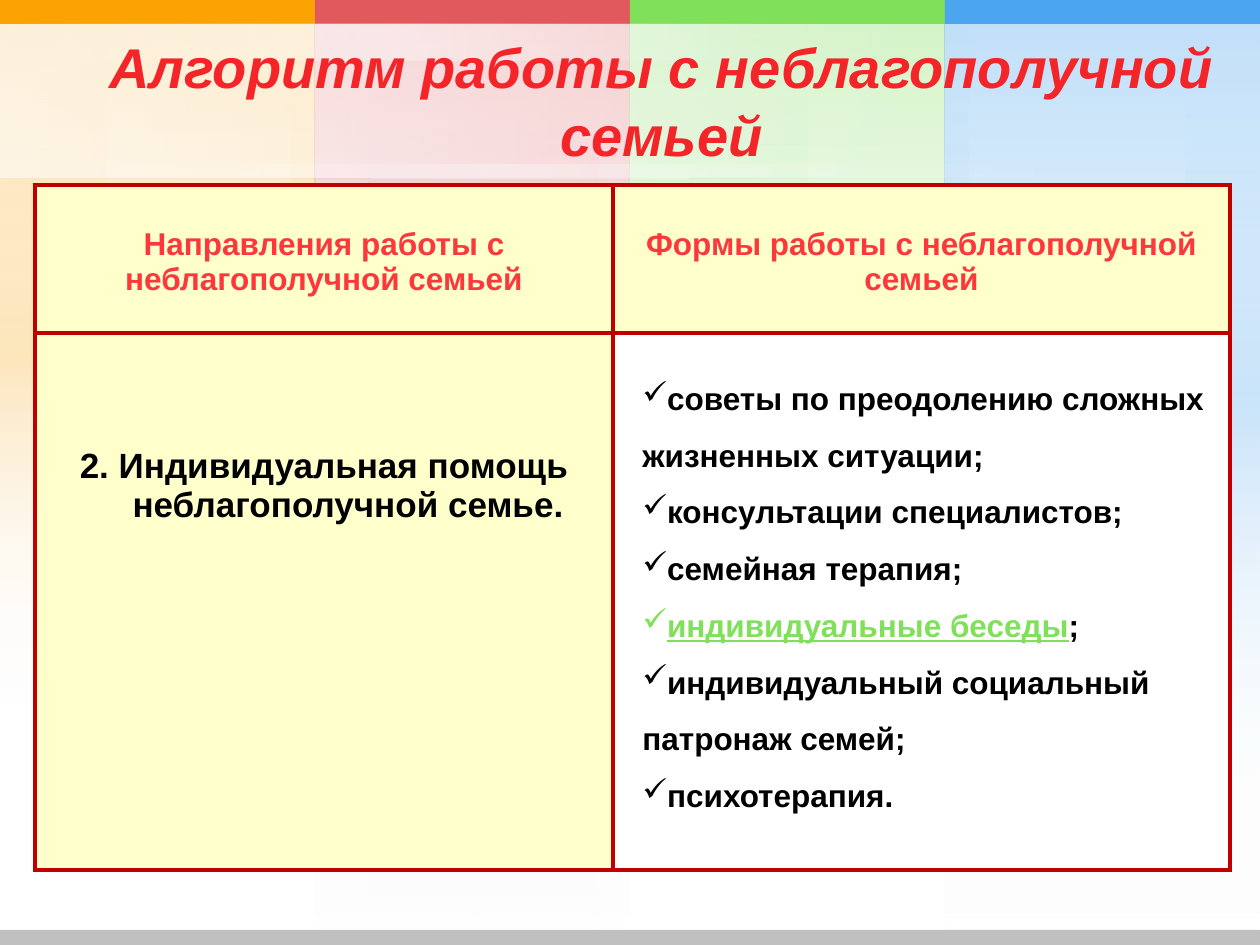
from lxml import etree
from pptx import Presentation
from pptx.dml.color import RGBColor
from pptx.enum.shapes import MSO_SHAPE
from pptx.enum.text import MSO_ANCHOR, MSO_AUTO_SIZE, PP_ALIGN
from pptx.oxml.ns import qn
from pptx.util import Emu, Pt

RECT = MSO_SHAPE.RECTANGLE
CENTER, LEFT = PP_ALIGN.CENTER, PP_ALIGN.LEFT
TOP, MIDDLE = MSO_ANCHOR.TOP, MSO_ANCHOR.MIDDLE
FIT_SHAPE, NO_FIT = MSO_AUTO_SIZE.SHAPE_TO_FIT_TEXT, MSO_AUTO_SIZE.NONE

SCALE = 914400 / 126
W, H = 1260, 945
BAND_W, STRIP_H = 315, 24
WHITE, CREAM, GREY, BORDER = "FFFFFF", "FFFFCC", "C0C0C0", "C00000"
BLACK, GREEN, RED, HEAD_RED = "000000", "80E05A", "F32528", "FD383C"

# Colour and layers (x offset, width, height) of each band, back to front
BANDS = [
    ("FCA304", [(0, 315, 708), (292, 23, 708), (0, 106, 708), (0, 315, 708)]),
    ("E1595C", [(0, 315, 945), (53, 231, 945), (0, 315, 945)]),
    (GREEN, [(0, 315, 708), (0, 178, 708), (0, 315, 708)]),
    ("4BA5EF", [(0, 24, 803), (0, 315, 941), (241, 74, 803), (0, 315, 941)]),
]
# Box and whether the glow peaks in the middle
SHINES = [
    ((524, -359, 13, 1061), True),
    ((397, -372, 154, 946), False),
    ((386, -362, 37, 808), True),
    ((397, -372, 154, 946), False),
]
FORMS = [
    [("советы по преодолению сложных жизненных ситуации;", {})],
    [("консультации специалистов;", {})],
    [("семейная терапия;", {})],
    [("индивидуальные беседы", {"color": GREEN, "underline": True}), (";", {})],
    [("индивидуальный социальный патронаж семей;", {})],
    [("психотерапия.", {})],
]


def px(v):
    return Emu(round(v * SCALE))


def rgb(color):
    return RGBColor.from_string(color)


def add_run(p, text, size=18, color=BLACK, italic=False, underline=False):
    r = p.add_run()
    r.text = text
    f = r.font
    f.name, f.size, f.bold = "Arial", Pt(size), True
    f.italic, f.underline = italic, underline
    f.color.rgb = rgb(color)


def add_rect(slide, box, fill=None):
    s = slide.shapes.add_shape(RECT, *map(px, box))
    s.shadow.inherit = False
    s.line.fill.background()
    if fill:
        s.fill.solid()
        s.fill.fore_color.rgb = rgb(fill)
    return s


def add_glow(slide, box, color, alpha, peak_in_middle):
    """Rectangle that fades downwards, or from its middle both ways."""
    s = add_rect(slide, box)
    s.fill.background()
    if peak_in_middle:
        stops = [(0, WHITE, 0), (50, color, alpha), (100, WHITE, 0)]
    else:
        stops = [(0, color, alpha), (100, WHITE, 0)]
    grad = etree.Element(qn("a:gradFill"), rotWithShape="1")
    gs_list = etree.SubElement(grad, qn("a:gsLst"))
    for pos, stop_color, opacity in stops:
        gs = etree.SubElement(gs_list, qn("a:gs"), pos=str(pos * 1000))
        clr = etree.SubElement(gs, qn("a:srgbClr"), val=stop_color)
        etree.SubElement(clr, qn("a:alpha"), val=str(opacity * 1000))
    etree.SubElement(grad, qn("a:lin"), ang="5400000", scaled="0")
    sp_pr = s._element.spPr
    sp_pr.replace(sp_pr.find(qn("a:noFill")), grad)
    return s


def add_background(slide):
    # Fading colour bands
    for i, (color, layers) in enumerate(BANDS):
        for dx, w, h in layers:
            add_glow(slide, (i * BAND_W + dx, 0, w, h), color, 20, w < BAND_W)
    # Solid strip on top
    for i, (color, _) in enumerate(BANDS):
        add_rect(slide, (i * BAND_W, 0, BAND_W, STRIP_H), color)
    # White shine behind the title
    for box, peak_in_middle in SHINES:
        add_glow(slide, box, WHITE, 35, peak_in_middle).rotation = 270
    # Footer bar
    add_rect(slide, (0, H - 15, W, 15), GREY)


def place_title(slide, box, text):
    title = slide.shapes.title
    title.left, title.top, title.width, title.height = map(px, box)
    slide.shapes._spTree.append(title._element)  # in front of the background
    tf = title.text_frame
    tf.word_wrap, tf.auto_size, tf.vertical_anchor = True, NO_FIT, MIDDLE
    p = tf.paragraphs[0]
    p.alignment = CENTER
    add_run(p, text, size=32, color=RED, italic=True)


def set_borders(cell, color, width):
    tc_pr = cell._tc.get_or_add_tcPr()
    for i, side in enumerate(("a:lnL", "a:lnR", "a:lnT", "a:lnB")):
        ln = etree.Element(qn(side), w=str(Pt(width)))
        fill = etree.SubElement(ln, qn("a:solidFill"))
        etree.SubElement(fill, qn("a:srgbClr"), val=color)
        tc_pr.insert(i, ln)


def format_cell(cell, fill, text="", margin_top=6, hanging=0, **fmt):
    cell.fill.solid()
    cell.fill.fore_color.rgb = rgb(fill)
    set_borders(cell, BORDER, 2.25)
    cell.vertical_anchor = TOP
    cell.margin_top = px(margin_top)
    if text:
        p = cell.text_frame.paragraphs[0]
        p.alignment = CENTER
        if hanging:
            p_pr = p._p.get_or_add_pPr()
            p_pr.set("marL", str(px(hanging)))
            p_pr.set("indent", str(-px(hanging)))
        add_run(p, text, **fmt)


def add_work_table(slide, box, cols, rows):
    table = slide.shapes.add_table(2, 2, *map(px, box)).table
    table.first_row = table.horz_banding = False
    for col, w in zip(table.columns, cols):
        col.width = px(w)
    for row, h in zip(table.rows, rows):
        row.height = px(h)
    headers = ("Направления работы с неблагополучной семьей",
               "Формы работы с неблагополучной семьей")
    for i, text in enumerate(headers):
        format_cell(table.cell(0, i), CREAM, text, margin_top=42, color=HEAD_RED)
    format_cell(table.cell(1, 0), CREAM,
                "2. Индивидуальная помощь неблагополучной семье.",
                margin_top=114, hanging=48, size=20)
    format_cell(table.cell(1, 1), WHITE)


def add_forms_list(slide, box):
    tf = slide.shapes.add_textbox(*map(px, box)).text_frame
    tf.word_wrap, tf.auto_size = True, FIT_SHAPE
    for i, runs in enumerate(FORMS):
        p = tf.add_paragraph() if i else tf.paragraphs[0]
        p.alignment, p.line_spacing = LEFT, 1.5
        etree.SubElement(p._p.get_or_add_pPr(), qn("a:buChar"), char="✓")
        for text, fmt in runs:
            add_run(p, text, **fmt)


def main():
    prs = Presentation()
    prs.slide_width, prs.slide_height = px(W), px(H)
    slide = prs.slides.add_slide(prs.slide_layouts[5])
    add_background(slide)
    add_work_table(slide, (35, 185, 1195, 685), cols=(578, 617), rows=(148, 537))
    place_title(slide, (63, 35, 1197, 130), "Алгоритм работы с неблагополучной семьей")
    add_forms_list(slide, (630, 354, 600, 471))
    prs.save("out.pptx")


if __name__ == "__main__":
    main()
